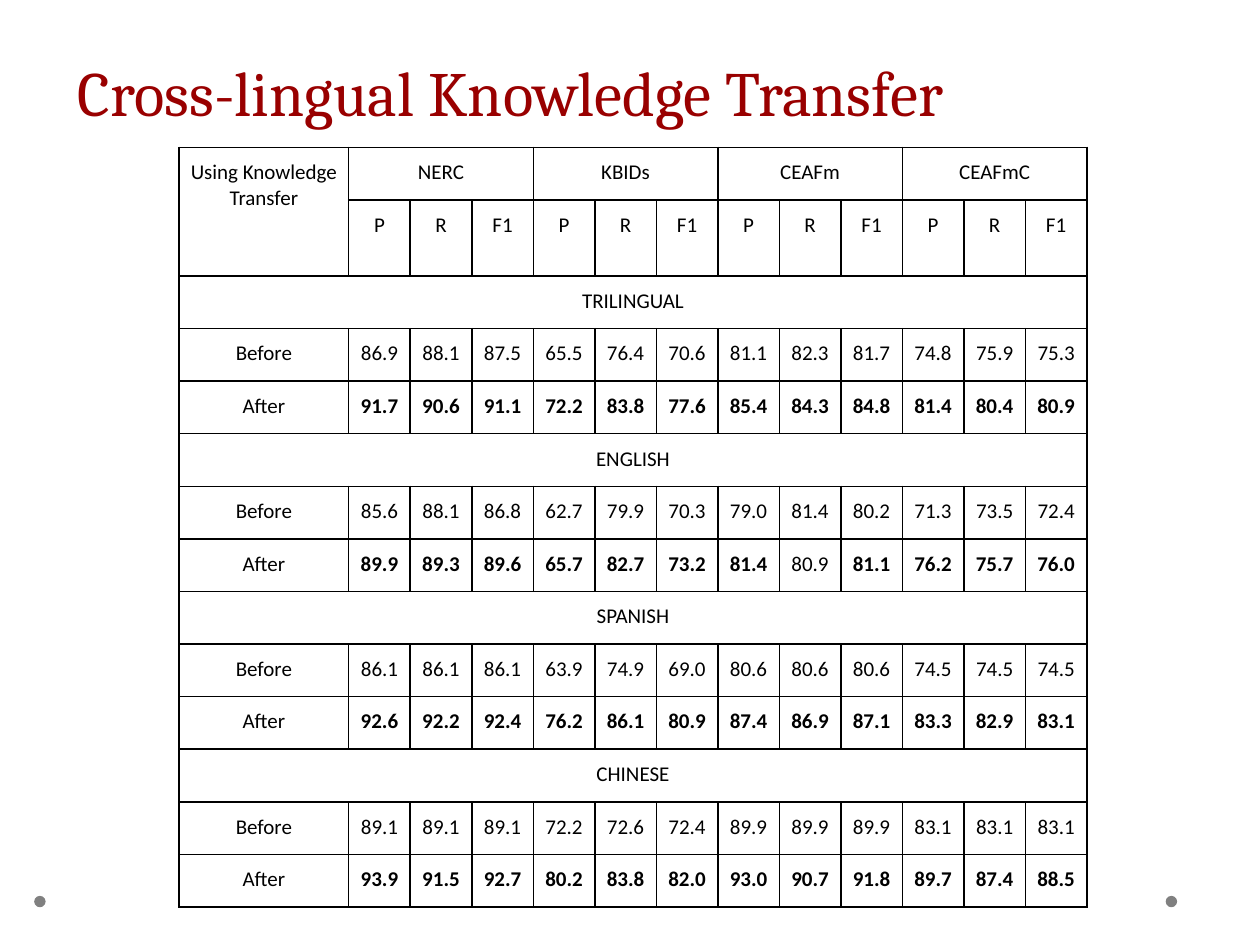
from lxml import etree
from pptx import Presentation
from pptx import util as u
from pptx.dml.color import RGBColor
from pptx.enum import shapes, text
from pptx.oxml.ns import qn

# Scores: P, R and F1 for each metric in turn
METRICS = ["NERC", "KBIDs", "CEAFm", "CEAFmC"]
MEASURES = ["P", "R", "F1"]
SCORES = {
    "TRILINGUAL": (
        "86.9 88.1 87.5 65.5 76.4 70.6 81.1 82.3 81.7 74.8 75.9 75.3",
        "91.7 90.6 91.1 72.2 83.8 77.6 85.4 84.3 84.8 81.4 80.4 80.9"),
    "ENGLISH": (
        "85.6 88.1 86.8 62.7 79.9 70.3 79.0 81.4 80.2 71.3 73.5 72.4",
        "89.9 89.3 89.6 65.7 82.7 73.2 81.4 80.9 81.1 76.2 75.7 76.0"),
    "SPANISH": (
        "86.1 86.1 86.1 63.9 74.9 69.0 80.6 80.6 80.6 74.5 74.5 74.5",
        "92.6 92.2 92.4 76.2 86.1 80.9 87.4 86.9 87.1 83.3 82.9 83.1"),
    "CHINESE": (
        "89.1 89.1 89.1 72.2 72.6 72.4 89.9 89.9 89.9 83.1 83.1 83.1",
        "93.9 91.5 92.7 80.2 83.8 82.0 93.0 90.7 91.8 89.7 87.4 88.5"),
}


def color(value):
    return RGBColor.from_string(value)


class Page:
    title_font, body_font = "Cambria", "Calibri"
    title_color, ink, dot_color = "990000", "000000", "808080"

    def __init__(self, deck):
        self.page = deck.slides.add_slide(deck.slide_layouts[6])

    def style(self, para, font, size, ink, bold=False):
        for span in para.runs:
            span.font.name = font
            span.font.size = u.Pt(size)
            span.font.bold = bold
            span.font.color.rgb = color(ink)

    def dot(self, left, top, size):
        dot = self.page.shapes.add_shape(
            shapes.MSO_SHAPE.OVAL, u.Cm(left), u.Cm(top), u.Cm(size), u.Cm(size))
        dot.shadow.inherit = False
        dot.fill.solid()
        dot.fill.fore_color.rgb = color(self.dot_color)
        dot.line.fill.background()

    def title(self, words, left, top, width, height):
        box = self.page.shapes.add_textbox(
            u.Cm(left), u.Cm(top), u.Cm(width), u.Cm(height))
        frame = box.text_frame
        frame.word_wrap = True
        frame.vertical_anchor = text.MSO_ANCHOR.MIDDLE
        frame.text = words
        para = frame.paragraphs[0]
        para.line_spacing = u.Pt(58)
        self.style(para, self.title_font, 36, self.title_color)

    def table(self, left, top, widths, height, rows):
        frame = self.page.shapes.add_table(
            rows, len(widths), u.Cm(left), u.Cm(top),
            u.Cm(sum(widths)), u.Cm(height * rows))
        table = frame.table
        table.first_row = table.horz_banding = False
        for column, width in zip(table.columns, widths):
            column.width = u.Cm(width)
        for row in table.rows:
            row.height = u.Cm(height)
            for cell in row.cells:
                self.plain_cell(cell)
        return table

    def plain_cell(self, cell):
        cell.margin_left = cell.margin_right = u.Cm(0.18)
        cell.margin_top = cell.margin_bottom = u.Cm(0.25)
        properties = cell._tc.get_or_add_tcPr()
        for side in ("lnL", "lnR", "lnT", "lnB"):
            line = etree.SubElement(properties, qn("a:" + side), w=str(u.Pt(1)))
            fill = etree.SubElement(line, qn("a:solidFill"))
            etree.SubElement(fill, qn("a:srgbClr"), val=self.ink)
        cell.fill.background()

    def label(self, cell, words, bold=False, until=None):
        if until is not None:
            cell.merge(until)
        cell.text_frame.text = words
        para = cell.text_frame.paragraphs[0]
        para.alignment = text.PP_ALIGN.CENTER
        self.style(para, self.body_font, 12, self.ink, bold)


def main():
    deck = Presentation()
    deck.slide_width, deck.slide_height = u.Cm(25.4), u.Cm(19.05)
    page = Page(deck)

    # Corner dots
    for left in (23.5, 0.69):
        page.dot(left, 18.06, 0.23)

    # Table header
    score_count = len(METRICS) * len(MEASURES)
    table = page.table(3.61, 2.97, [3.42] + [1.24] * score_count, 1.06,
                       2 + 3 * len(SCORES))
    page.label(table.cell(0, 0), "Using Knowledge Transfer", until=table.cell(1, 0))
    for group, metric in enumerate(METRICS):
        first = 1 + group * len(MEASURES)
        page.label(table.cell(0, first), metric,
                   until=table.cell(0, first + len(MEASURES) - 1))
        for offset, measure in enumerate(MEASURES):
            page.label(table.cell(1, first + offset), measure)

    # One block per language; improved scores are bold
    for block, (language, (before, after)) in enumerate(SCORES.items()):
        row = 2 + 3 * block
        page.label(table.cell(row, 0), language, until=table.cell(row, score_count))
        page.label(table.cell(row + 1, 0), "Before")
        page.label(table.cell(row + 2, 0), "After")
        pairs = zip(before.split(), after.split())
        for column, (old, new) in enumerate(pairs, start=1):
            page.label(table.cell(row + 1, column), old)
            page.label(table.cell(row + 2, column), new, bold=float(new) > float(old))

    # Title
    page.title("Cross-lingual Knowledge Transfer", 1.32, 0, 22.86, 3.18)

    deck.save("out.pptx")


if __name__ == "__main__":
    main()
